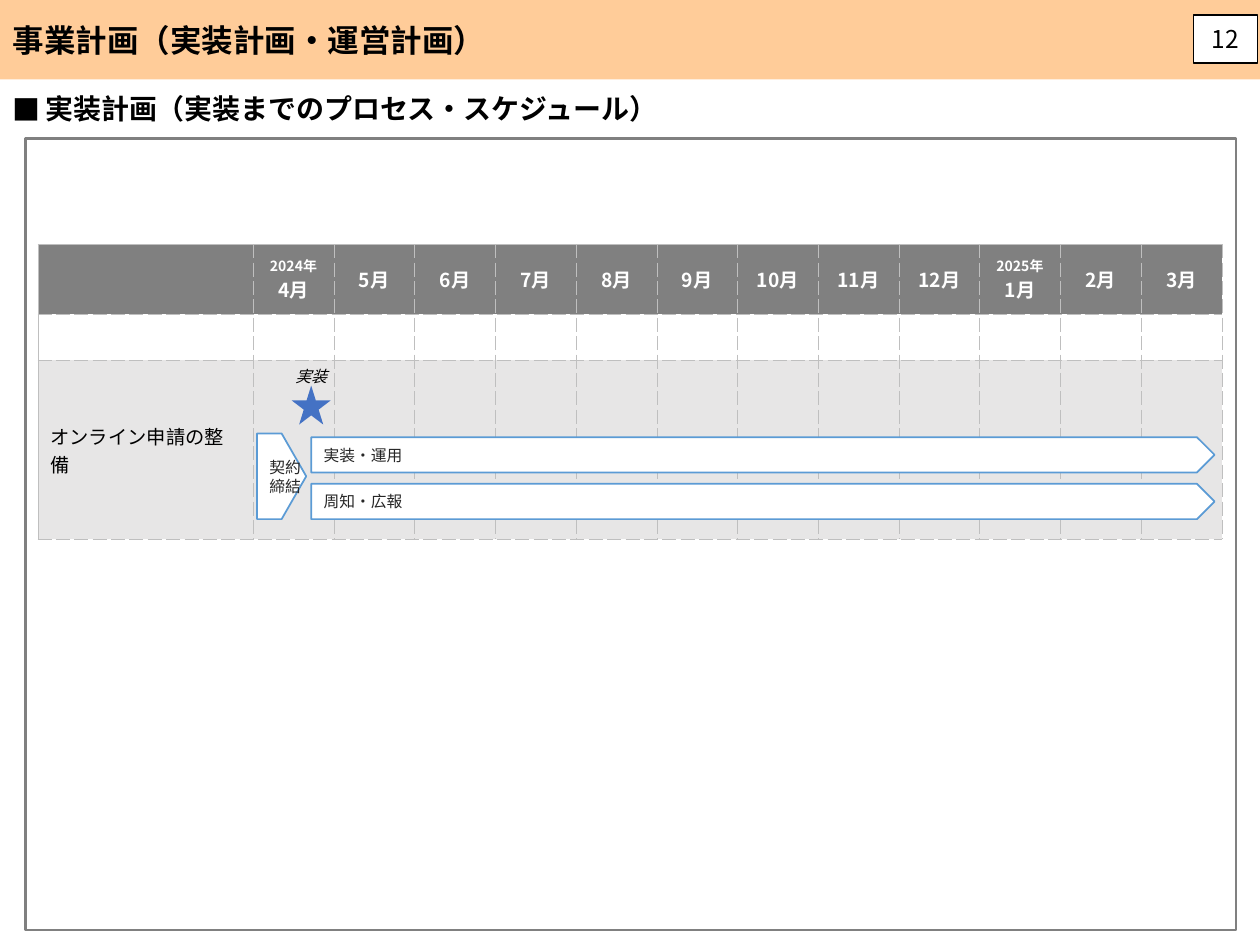
from lxml.etree import SubElement
from pptx import Presentation
from pptx.dml.color import RGBColor
from pptx.enum.shapes import MSO_SHAPE as Shape
from pptx.enum.text import MSO_ANCHOR as Anchor, MSO_AUTO_SIZE as AutoSize, PP_ALIGN as Align
from pptx.oxml.ns import qn
from pptx.util import Inches, Pt

FONT = "Noto Sans CJK JP"
BLACK = RGBColor(0x00, 0x00, 0x00)
WHITE = RGBColor(0xFF, 0xFF, 0xFF)
INK = RGBColor(0x26, 0x26, 0x26)
GRAY = RGBColor(0x80, 0x80, 0x80)
PALE_GRAY = RGBColor(0xE7, 0xE6, 0xE6)
GRID_GRAY = RGBColor(0xBF, 0xBF, 0xBF)
PEACH = RGBColor(0xFF, 0xCC, 0x99)
ARROW_BLUE = RGBColor(0x5B, 0x9B, 0xD5)
STAR_BLUE = RGBColor(0x44, 0x72, 0xC4)

MONTHS = ["2024年\n4月", "5月", "6月", "7月", "8月", "9月", "10月",
          "11月", "12月", "2025年\n1月", "2月", "3月"]
LABEL_WIDTH = 1.71
ROW_HEIGHTS = [0.55, 0.37, 1.42]


def write(frame, text, sizes=(11,), color=BLACK, bold=False, italic=False,
          align=Align.LEFT, anchor=Anchor.MIDDLE):
    frame.vertical_anchor = anchor
    lines = text.split("\n")
    for index, line in enumerate(lines):
        para = frame.paragraphs[0] if index == 0 else frame.add_paragraph()
        para.alignment = align
        span = para.add_run()
        span.text = line
        font = span.font
        font.size = Pt(sizes[min(index, len(sizes) - 1)])
        font.bold, font.italic = bold, italic
        font.color.rgb = color
        font.name = FONT
        latin = span._r.rPr.find(qn("a:latin"))
        east_asian = SubElement(span._r.rPr, qn("a:ea"), typeface=FONT)
        latin.addnext(east_asian)


def set_insets(frame, side, vertical):
    frame.margin_left = frame.margin_right = Inches(side)
    frame.margin_top = frame.margin_bottom = Inches(vertical)


def place(item, box):
    item.left, item.top, item.width, item.height = map(Inches, box)


def add_box(page, kind, box, fill=None, line=None, weight=1):
    item = page.shapes.add_shape(kind, *map(Inches, box))
    item.shadow.inherit = False
    if fill is None:
        item.fill.background()
    else:
        item.fill.solid()
        item.fill.fore_color.rgb = fill
    if line is None:
        item.line.fill.background()
    else:
        item.line.color.rgb = line
        item.line.width = Pt(weight)
    return item


def add_header(page, box):
    title = page.shapes.title
    place(title, box)
    title.fill.solid()
    title.fill.fore_color.rgb = PEACH
    title.text_frame.auto_size = AutoSize.NONE
    write(title.text_frame, "事業計画（実装計画・運営計画）", sizes=(18,), bold=True)


def add_page_number(page, box):
    number = add_box(page, Shape.RECTANGLE, box, WHITE, BLACK, 0.75)
    write(number.text_frame, "12", sizes=(14,), align=Align.CENTER)


def add_heading(page, box):
    body = page.placeholders[1]
    place(body, box)
    frame = body.text_frame
    frame.auto_size = AutoSize.NONE
    write(frame, "実装計画（実装までのプロセス・スケジュール）", sizes=(16,), bold=True,
          anchor=Anchor.TOP)
    para = frame.paragraphs[0]
    para.space_before = Pt(0.8)
    properties = para._p.get_or_add_pPr()
    properties.set("marL", str(Inches(0.26)))
    properties.set("indent", str(Inches(-0.26)))
    SubElement(properties, qn("a:buFont"), typeface=FONT)
    SubElement(properties, qn("a:buChar"), char="■")


def set_borders(cell, solid_sides):
    properties = cell._tc.get_or_add_tcPr()
    for side in "LRTB":
        border = SubElement(properties, qn(f"a:ln{side}"), w=str(Pt(0.25)))
        fill = SubElement(border, qn("a:solidFill"))
        SubElement(fill, qn("a:srgbClr"), val=str(GRID_GRAY))
        dash = "solid" if side in solid_sides else "sysDash"
        SubElement(border, qn("a:prstDash"), val=dash)


def add_schedule(page, box):
    columns = len(MONTHS) + 1
    table = page.shapes.add_table(len(ROW_HEIGHTS), columns, *map(Inches, box)).table
    month_width = (box[2] - LABEL_WIDTH) / len(MONTHS)
    for index, column in enumerate(table.columns):
        column.width = Inches(month_width if index else LABEL_WIDTH)
    for row, height in zip(table.rows, ROW_HEIGHTS):
        row.height = Inches(height)

    texts = [[""] + MONTHS, [""] * columns, ["オンライン申請の整備"] + [""] * len(MONTHS)]
    for row, (line, fill) in enumerate(zip(texts, [GRAY, WHITE, PALE_GRAY])):
        for column, text in enumerate(line):
            cell = table.cell(row, column)
            set_borders(cell, ("L" if column == 0 else "") + ("T" if row == 0 else ""))
            cell.fill.solid()
            cell.fill.fore_color.rgb = fill
            cell.vertical_anchor = Anchor.MIDDLE
            if not text:
                para = cell.text_frame.paragraphs[0]
                SubElement(para._p, qn("a:endParaRPr"), sz="1100")
            elif row == 0:
                write(cell.text_frame, text, sizes=(8, 11) if "\n" in text else (11,),
                      color=WHITE, bold=True, align=Align.CENTER)
            else:
                write(cell.text_frame, text)


def add_phase(page, box, text):
    arrow = add_box(page, Shape.PENTAGON, box, WHITE, ARROW_BLUE)
    frame = arrow.text_frame
    set_insets(frame, 0.1, 0.02)
    frame.word_wrap = False
    write(frame, text, sizes=(9,), color=INK)


def add_milestone(page, box, text):
    left, top, width, height = box
    label = page.shapes.add_textbox(*map(Inches, (left, top, width, 0.25)))
    label.text_frame.word_wrap = True
    set_insets(label.text_frame, 0.05, 0.05)
    write(label.text_frame, text, sizes=(9,), italic=True, align=Align.CENTER,
          anchor=Anchor.TOP)
    star = 0.31
    add_box(page, Shape.STAR_5_POINT,
            (left + (width - star) / 2, top + height - star, star, star), STAR_BLUE)


def add_plan(page, box):
    left, top, width, height = box
    add_box(page, Shape.RECTANGLE, box, line=GRAY, weight=1.5)
    add_schedule(page, (left + 0.1, top + 0.84, 9.4, sum(ROW_HEIGHTS)))
    add_milestone(page, (left + 1.81, top + 1.76, 0.92, 0.51), "実装")
    for index, text in enumerate(["実装・運用", "周知・広報"]):
        add_phase(page, (left + 2.27, top + 2.37 + 0.37 * index, 7.17, 0.28), text)
    add_phase(page, (left + 1.84, top + 2.34, 0.39, 0.68), "契約\n締結")


def main():
    deck = Presentation()
    deck.slide_width, deck.slide_height = Inches(10), Inches(7.5)
    page = deck.slides.add_slide(deck.slide_layouts[1])
    add_header(page, (0, 0, 10, 0.63))
    add_page_number(page, (9.47, 0.12, 0.51, 0.38))
    add_heading(page, (0, 0.68, 8.15, 0.37))
    add_plan(page, (0.2, 1.1, 9.61, 6.28))
    deck.save("out.pptx")


if __name__ == "__main__":
    main()
